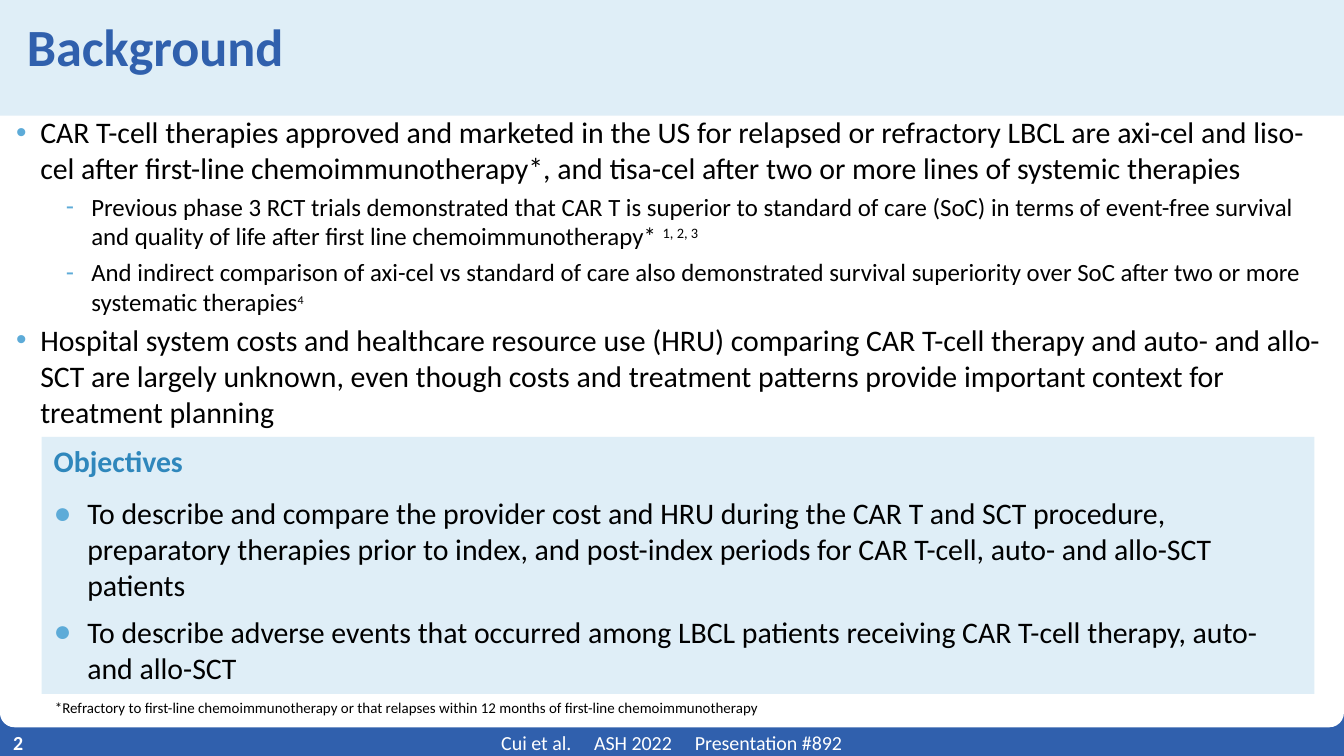
from lxml import etree
from pptx import Presentation
from pptx import util as u
from pptx.dml import color
from pptx.enum import shapes, text
from pptx.oxml import ns

BLUE, PALE, SKY, TEAL = "3060AD", "DFEEF7", "5DABD8", "2F87BC"
WHITE, BLACK = "FFFFFF", "000000"

deck = Presentation()
deck.slide_width = u.Inches(10)
deck.slide_height = deck.slide_width * 9 // 16
slide = deck.slides.add_slide(deck.slide_layouts[6])
COL, ROW = deck.slide_width / 100, deck.slide_height / 100


def panel(left, top, width, height, fill=None, kind=shapes.MSO_SHAPE.RECTANGLE,
          insets=(0, 0, 0, 0), anchor=text.MSO_ANCHOR.TOP):
    """Place a box on the 100 x 100 grid; insets are in columns."""
    box = slide.shapes.add_shape(kind, int(left * COL), int(top * ROW),
                                 int(width * COL), int(height * ROW))
    box.shadow.inherit = False
    box.line.fill.background()
    if fill:
        box.fill.solid()
        box.fill.fore_color.rgb = color.RGBColor.from_string(fill)
    else:
        box.fill.background()
    frame = box.text_frame
    frame.word_wrap, frame.vertical_anchor = True, anchor
    (frame.margin_left, frame.margin_top,
     frame.margin_right, frame.margin_bottom) = (int(i * COL) for i in insets)
    return box


def write(box, words, size, ink=BLACK, bold=False, after=0, bullet=None,
          indent=0, hang=0):
    """Fill the first empty paragraph, or add one; indents are in columns."""
    frame = box.text_frame
    para = frame.add_paragraph() if frame.text else frame.paragraphs[0]
    para.text = words
    para.alignment, para.space_after = text.PP_ALIGN.LEFT, u.Pt(after)
    para.font.name, para.font.size, para.font.bold = "Calibri", u.Pt(size), bold
    para.font.color.rgb = color.RGBColor.from_string(ink)
    if bullet:
        # The marker takes its size from the first run
        para.runs[0].font.size = u.Pt(size)
        props = para._p.get_or_add_pPr()
        props.set("marL", str(int(indent * COL)))
        props.set("indent", str(int(-hang * COL)))
        tint = etree.Element(ns.qn("a:buClr"))
        etree.SubElement(tint, ns.qn("a:srgbClr"), val=SKY)
        for part in (tint, etree.Element(ns.qn("a:buFont"), typeface="Arial"),
                     etree.Element(ns.qn("a:buChar"), char=bullet)):
            props.find(ns.qn("a:defRPr")).addprevious(part)
    return para


# Blue base with a white page whose lower corners are rounded
panel(0, 90, 100, 10, BLUE)
page = panel(0, 0, 100, 96.2, WHITE, shapes.MSO_SHAPE.ROUND_2_SAME_RECTANGLE)
page.adjustments[0], page.adjustments[1] = 0, 0.02

# Footer: three parts held apart by tab stops
footer = panel(0, 96.4, 100, 3.6, insets=(37.3, 0, 0, 0), anchor=text.MSO_ANCHOR.MIDDLE)
credit = write(footer, "Cui et al.\tASH 2022\tPresentation #892", 10.7, WHITE)
stops = etree.Element(ns.qn("a:tabLst"))
for column in (6.9, 14.4):
    etree.SubElement(stops, ns.qn("a:tab"), pos=str(int(column * COL)), algn="l")
credit._p.get_or_add_pPr().find(ns.qn("a:defRPr")).addprevious(stops)

# Title band
title = panel(0, 0, 100, 15.3, PALE, insets=(2, 2, 2, 0))
write(title, "Background", 28, BLUE, True).line_spacing = 0.8

# Background points: level, words, reference marks, size of the marks
background = panel(1.2, 15.1, 98.4, 73, insets=(0, 0, 0.6, 0))
for level, words, marks, marks_size in (
    (0, "CAR T-cell therapies approved and marketed in the US for relapsed or refractory LBCL "
        "are axi-cel and liso-cel after first-line chemoimmunotherapy*, and tisa-cel after two "
        "or more lines of systemic therapies", "", None),
    (1, "Previous phase 3 RCT trials demonstrated that CAR T is superior to standard of care "
        "(SoC) in terms of event-free survival and quality of life after first line "
        "chemoimmunotherapy* ", "1, 2, 3", 13.3),
    (1, "And indirect comparison of axi-cel vs standard of care also demonstrated survival "
        "superiority over SoC after two or more systematic therapies", "4", 11),
    (0, "Hospital system costs and healthcare resource use (HRU) comparing CAR T-cell therapy "
        "and auto- and allo-SCT are largely unknown, even though costs and treatment patterns "
        "provide important context for treatment planning", "", None),
):
    point = write(background, words, (16, 13.3)[level], after=3, bullet="•-"[level],
                  indent=(1.8, 5.6)[level], hang=(1.8, 1.9)[level])
    point.level = level
    if marks:
        reference = point.add_run()
        reference.text = marks
        reference.font.size = u.Pt(marks_size)
        reference.font._element.set("baseline", "30000")

# Slide number
number = panel(0, 95.5, 6.3, 5.3, insets=(1, 0.5, 1, 0.5), anchor=text.MSO_ANCHOR.MIDDLE)
write(number, "2", 10.7, WHITE, True)

# Objectives
objectives = panel(3.1, 57.8, 94.7, 34, PALE, insets=(0.9, 0.4, 0.9, 0.4))
write(objectives, "Objectives", 16, TEAL, True, after=9)
for goal, gap in (
    ("To describe and compare the provider cost and HRU during the CAR T and SCT procedure, "
     "preparatory therapies prior to index, and post-index periods for CAR T-cell, auto- and "
     "allo-SCT patients", 6),
    ("To describe adverse events that occurred among LBCL patients receiving CAR T-cell "
     "therapy, auto- and allo-SCT", 9),
):
    write(objectives, goal, 16, after=gap, bullet="●", indent=2.5, hang=2.5)

# Footnote
footnote = panel(3.1, 91.6, 77.7, 4.2, insets=(1, 0.5, 1, 0.5))
write(footnote, "*Refractory to first-line chemoimmunotherapy or that relapses within 12 months "
                "of first-line chemoimmunotherapy", 8)

deck.save("out.pptx")
